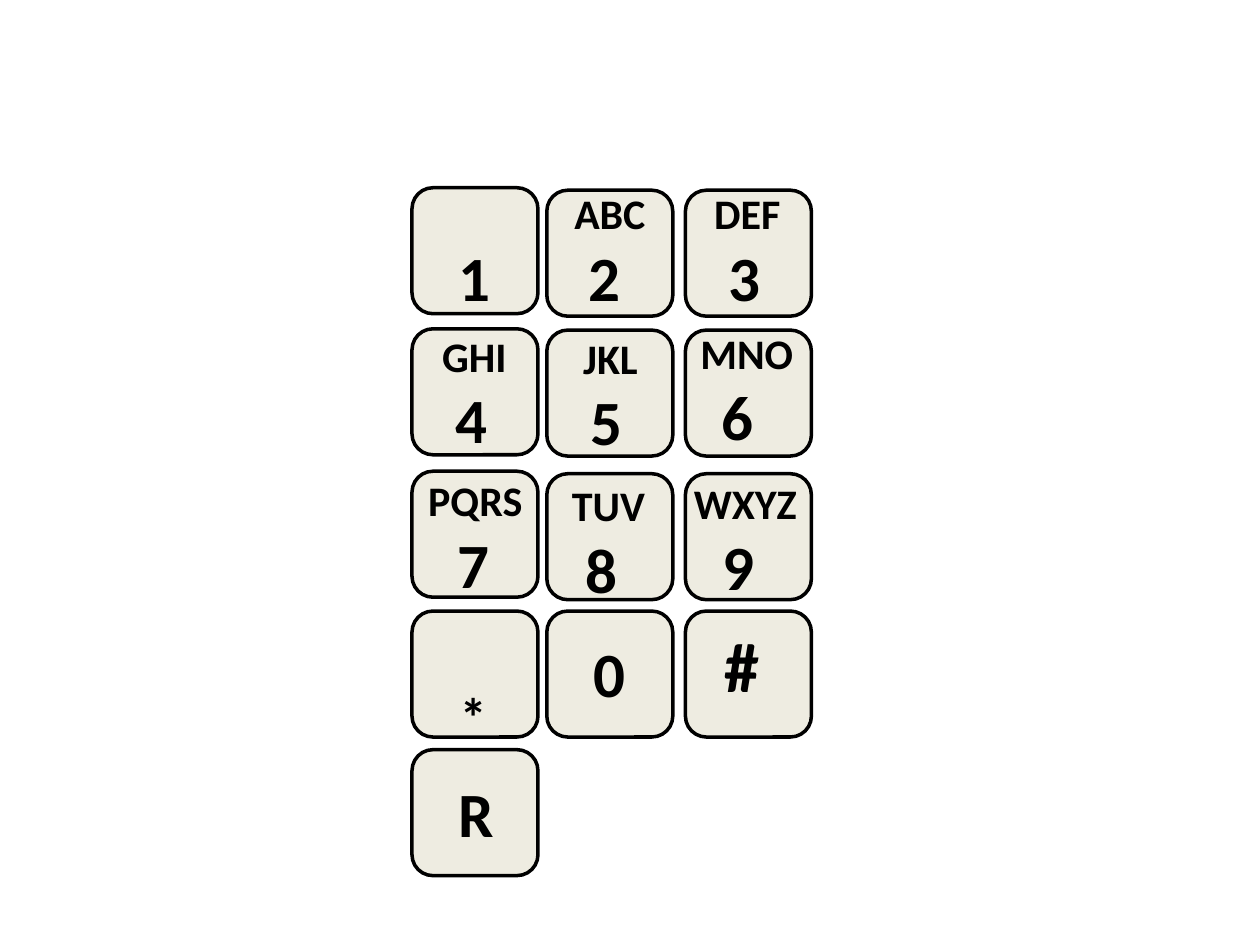
import pptx
import pptx.dml.color
import pptx.enum.shapes
import pptx.enum.text
import pptx.util
from pptx.util import Inches

FONT = "Calibri"
INK = "000000"
KEY_FILL = "EEECE1"
KEY_SIZE = 1
COLUMNS = (3.27, 4.34, 5.44)
# Top of the first key in each row, then of the other keys
ROWS = ((1.49, 1.51), (2.61, 2.62), (3.74, 3.76), (4.85, 4.85), (5.95, 5.95))

# Letters, digit, left, top, width, and indent of the digit under its letters
LETTER_KEYS = (
    ("ABC", "2", 4.46, 1.44, 0.77, 0.11),
    ("DEF", "3", 5.57, 1.44, 0.73, 0.11),
    ("GHI", "4", 3.41, 2.57, 0.72, 0.11),
    ("JKL", "5", 4.53, 2.59, 0.64, 0.06),
    ("MNO", "6", 5.46, 2.55, 0.95, 0.17),
    ("PQRS", "7", 3.30, 3.72, 0.96, 0.23),
    ("TUV", "8", 4.44, 3.76, 0.79, 0.11),
    ("WXYZ", "9", 5.41, 3.74, 1.03, 0.23),
)

# Symbol, left, top, width, height, text size, baseline shift in percent
SINGLE_KEYS = (
    ("1", 3.54, 1.84, 0.46, 0.71, 36, 0),
    ("*", 3.55, 4.87, 0.45, 0.71, 54, -25),
    ("0", 4.61, 4.99, 0.46, 0.71, 36, 0),
    ("#", 5.65, 4.89, 0.48, 0.77, 40, 0),
    ("R", 3.54, 6.10, 0.49, 0.71, 36, 0),
)


def color(hex_value):
    return pptx.dml.color.RGBColor.from_string(hex_value)


class Keypad:
    def __init__(self, slide):
        self.slide = slide

    def key(self, left, top):
        button = self.slide.shapes.add_shape(
            pptx.enum.shapes.MSO_SHAPE.ROUNDED_RECTANGLE,
            Inches(left), Inches(top), Inches(KEY_SIZE), Inches(KEY_SIZE))
        button.shadow.inherit = False
        button.fill.solid()
        button.fill.fore_color.rgb = color(KEY_FILL)
        button.line.color.rgb = color(INK)
        button.line.width = pptx.util.Pt(2)

    def label(self, lines, sizes, left, top, width, height, indent=0, shift=0):
        caption = self.slide.shapes.add_textbox(
            Inches(left), Inches(top), Inches(width), Inches(height))
        frame = caption.text_frame
        frame.text = "\n".join(lines)
        frame.word_wrap = False
        frame.auto_size = pptx.enum.text.MSO_AUTO_SIZE.SHAPE_TO_FIT_TEXT
        for paragraph, size in zip(frame.paragraphs, sizes):
            font = paragraph.runs[0].font
            font.name = FONT
            font.size = pptx.util.Pt(size)
            font.bold = True
            font.color.rgb = color(INK)
        last = frame.paragraphs[-1]
        if indent:
            last._p.get_or_add_pPr().set("marL", str(Inches(indent)))
        if shift:
            last.runs[0]._r.get_or_add_rPr().set("baseline", str(shift * 1000))


def main():
    deck = pptx.Presentation()
    deck.slide_width = Inches(10)
    deck.slide_height = Inches(7.5)
    keypad = Keypad(deck.slides.add_slide(deck.slide_layouts[6]))

    # Keys: four full rows, then a single key
    for row, (first_top, other_top) in enumerate(ROWS):
        columns = COLUMNS if row < 4 else COLUMNS[:1]
        for column, left in enumerate(columns):
            keypad.key(left, other_top if column else first_top)

    # Digits with letters above them
    for letters, digit, left, top, width, indent in LETTER_KEYS:
        keypad.label((letters, digit), (24, 36), left, top, width, 1.11, indent)

    # Keys with one symbol
    for symbol, left, top, width, height, size, shift in SINGLE_KEYS:
        keypad.label((symbol,), (size,), left, top, width, height, shift=shift)

    deck.save("out.pptx")


if __name__ == "__main__":
    main()
